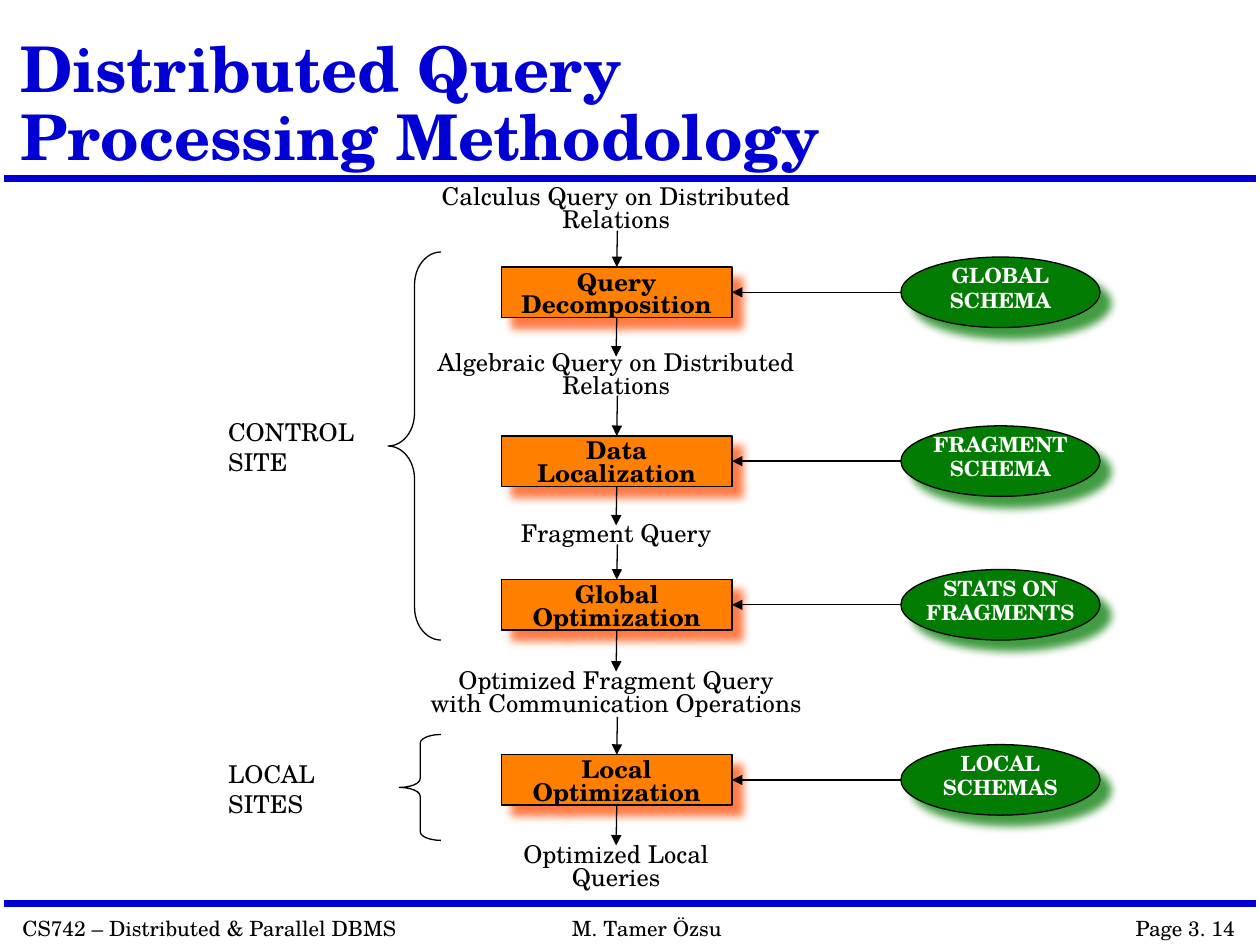
from lxml.etree import SubElement
from pptx import Presentation
from pptx.dml.color import RGBColor
from pptx.enum.shapes import MSO_CONNECTOR, MSO_SHAPE
from pptx.enum.text import MSO_ANCHOR, PP_ALIGN
from pptx.oxml.ns import qn
from pptx.util import Inches, Pt

BLUE = RGBColor(0x00, 0x00, 0xD4)
BLACK = RGBColor(0x00, 0x00, 0x00)
WHITE = RGBColor(0xFF, 0xFF, 0xFF)
ORANGE = RGBColor(0xFF, 0x80, 0x00)
RED = RGBColor(0xFF, 0x50, 0x08)
GREEN = RGBColor(0x03, 0x7C, 0x03)
FONT = "TeX Gyre Schola"


def write_lines(text_frame, lines, size, color=BLACK, bold=False,
                spacing=None, align=PP_ALIGN.CENTER, margin=0):
    text_frame.word_wrap = False
    text_frame.margin_left = text_frame.margin_right = Inches(margin)
    text_frame.margin_top = text_frame.margin_bottom = Inches(margin / 2)
    for index, line in enumerate(lines):
        paragraph = text_frame.paragraphs[0] if index == 0 else text_frame.add_paragraph()
        paragraph.alignment = align
        paragraph.line_spacing = spacing
        run = paragraph.add_run()
        run.text = line
        run.font.name = FONT
        run.font.size = Pt(size)
        run.font.bold = bold
        run.font.color.rgb = color


def add_line(start, end, color=BLACK, width=0.75, arrow=True):
    connector = slide.shapes.add_connector(
        MSO_CONNECTOR.STRAIGHT, *[Inches(value) for value in (*start, *end)])
    connector.line.color.rgb = color
    connector.line.width = Pt(width)
    if arrow:
        SubElement(connector.line._get_or_add_ln(), qn("a:tailEnd"), type="triangle")
    SubElement(connector._element.spPr, qn("a:effectLst"))
    return connector


presentation = Presentation()
presentation.slide_width = Inches(10)
presentation.slide_height = Inches(7.5)
slide = presentation.slides.add_slide(presentation.slide_layouts[5])

for rule_top in (1.42, 7.17):
    add_line((0.03, rule_top), (9.97, rule_top), BLUE, 4, arrow=False)

title = slide.shapes.title
title.left, title.top = Inches(0.06), Inches(0)
title.width, title.height = Inches(7.27), Inches(1.43)
write_lines(title.text_frame, ["Distributed Query Processing Methodology"], 36, BLUE,
            bold=True, spacing=0.9, align=PP_ALIGN.LEFT, margin=0.1)
title.text_frame.word_wrap = True
title.text_frame.vertical_anchor = MSO_ANCHOR.BOTTOM

footers = [
    ("CS742 – Distributed & Parallel DBMS", 0.08, 3.2, PP_ALIGN.LEFT),
    ("M. Tamer Özsu", 4.44, 1.39, PP_ALIGN.LEFT),
    ("Page 3. 14", 8.9, 1, PP_ALIGN.RIGHT),
]
for text, left, width, align in footers:
    footer = slide.shapes.add_textbox(Inches(left), Inches(7.22), Inches(width), Inches(0.3))
    write_lines(footer.text_frame, [text], 12, align=align, margin=0.1)

queries = [
    (["Calculus Query on Distributed", "Relations"], 1.49, 13),
    (["Algebraic Query on Distributed", "Relations"], 2.81, 13),
    (["Fragment Query"], 4.11, 17),
    (["Optimized Fragment Query", "with Communication Operations"], 5.33, 13),
    (["Optimized Local", "Queries"], 6.71, 13),
]
for lines, top, spacing in queries:
    query = slide.shapes.add_textbox(Inches(3.35), Inches(top), Inches(3.08), Inches(0.38))
    write_lines(query.text_frame, lines, 14, spacing=Pt(spacing))

sites = [
    (["CONTROL", "SITE"], 3.31, 3.08, 2, 0.42, 3.08, 0.62),
    (["LOCAL", "SITES"], 6.02, 3.17, 5.83, 0.33, 0.84, 0.21),
]
for lines, top, brace_left, brace_top, brace_width, brace_height, curve in sites:
    site = slide.shapes.add_textbox(Inches(1.81), Inches(top), Inches(1.15), Inches(0.44))
    write_lines(site.text_frame, lines, 14, spacing=Pt(17), align=PP_ALIGN.LEFT)
    brace = slide.shapes.add_shape(MSO_SHAPE.LEFT_BRACE, Inches(brace_left), Inches(brace_top),
                                   Inches(brace_width), Inches(brace_height))
    brace.adjustments[0] = curve
    brace.fill.background()
    brace.line.color.rgb = BLACK
    brace.line.width = Pt(0.75)
    brace.shadow.inherit = False

stages = [
    (["Query", "Decomposition"], ["GLOBAL", "SCHEMA"], 2.12, 1.83, 2.83),
    (["Data", "Localization"], ["FRAGMENT", "SCHEMA"], 3.46, 3.14, 4.17),
    (["Global", "Optimization"], ["STATS ON", "FRAGMENTS"], 4.6, 4.32, 5.33),
    (["Local", "Optimization"], ["LOCAL", "SCHEMAS"], 5.99, 5.69, 6.71),
]
for step_lines, schema_lines, top, arrow_start, arrow_end in stages:
    step = slide.shapes.add_shape(MSO_SHAPE.RECTANGLE, Inches(3.98), Inches(top),
                                  Inches(1.83), Inches(0.4))
    schema = slide.shapes.add_shape(MSO_SHAPE.OVAL, Inches(7.15), Inches(top - 0.08),
                                    Inches(1.58), Inches(0.56))
    for shape, fill, glow in ((step, ORANGE, RED), (schema, GREEN, GREEN)):
        shape.fill.solid()
        shape.fill.fore_color.rgb = fill
        shape.line.color.rgb = BLACK
        shape.line.width = Pt(0.75)
        shape.shadow.inherit = False
        effects = shape._element.spPr.find(qn("a:effectLst"))
        shadow = SubElement(effects, qn("a:outerShdw"), blurRad=str(Pt(5)),
                            dist=str(Pt(8.5)), dir="2700000", algn="ctr", rotWithShape="0")
        shadow_color = SubElement(shadow, qn("a:srgbClr"), val=str(glow))
        SubElement(shadow_color, qn("a:alpha"), val="75000")

    write_lines(step.text_frame, step_lines, 14, bold=True, spacing=Pt(13))
    step.text_frame.vertical_anchor = MSO_ANCHOR.TOP
    step.text_frame.margin_top = Inches(0.05)
    write_lines(schema.text_frame, schema_lines, 12, WHITE, bold=True, spacing=Pt(14))
    schema.text_frame.vertical_anchor = MSO_ANCHOR.MIDDLE
    schema.text_frame.margin_bottom = Inches(0.07)

    add_line((4.9, arrow_start), (4.9, top)).end_connect(step, 0)
    add_line((4.9, top + 0.4), (4.89, arrow_end)).begin_connect(step, 2)
    add_line((7.15, top + 0.2), (5.81, top + 0.2)).end_connect(step, 3)

presentation.save("out.pptx")
